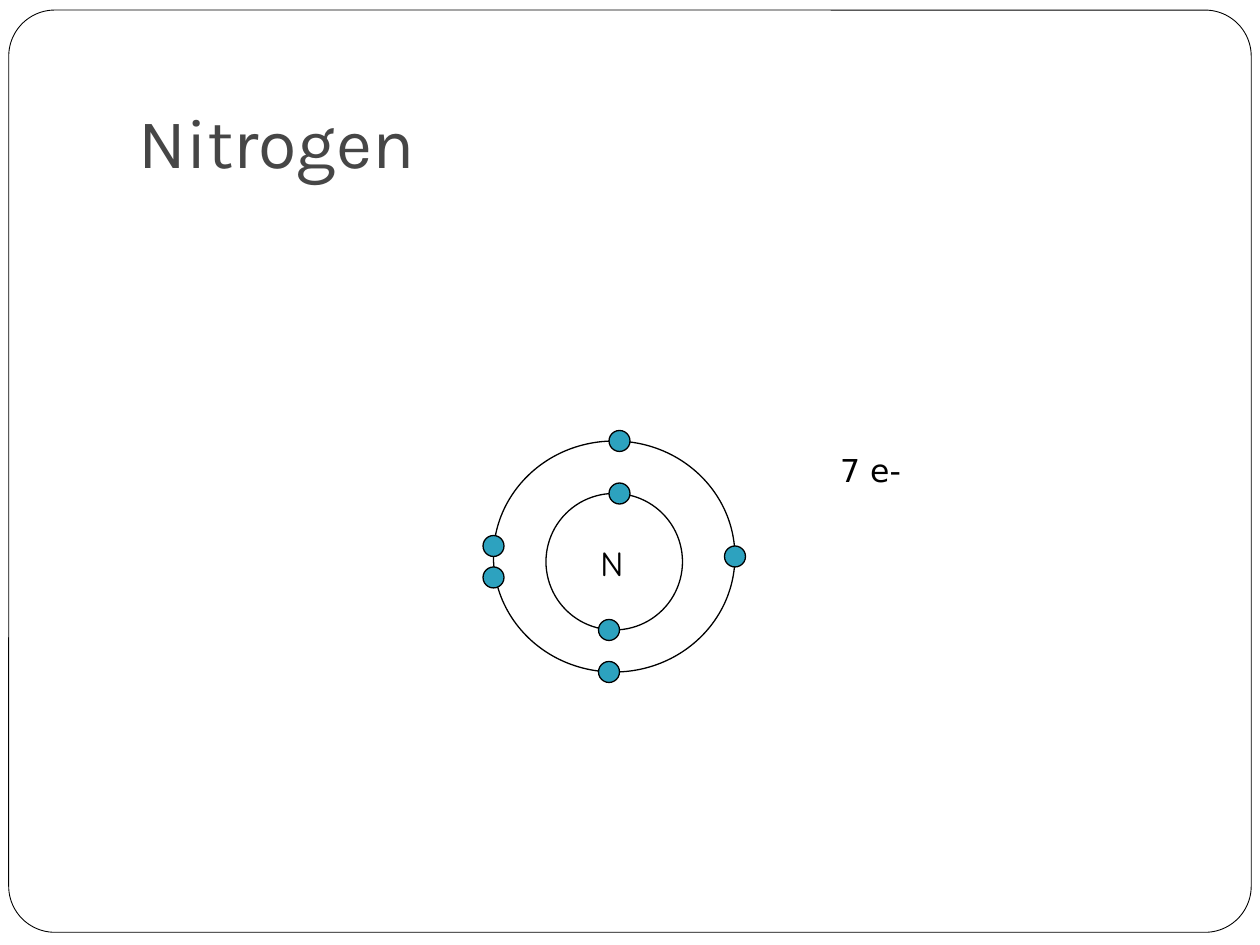
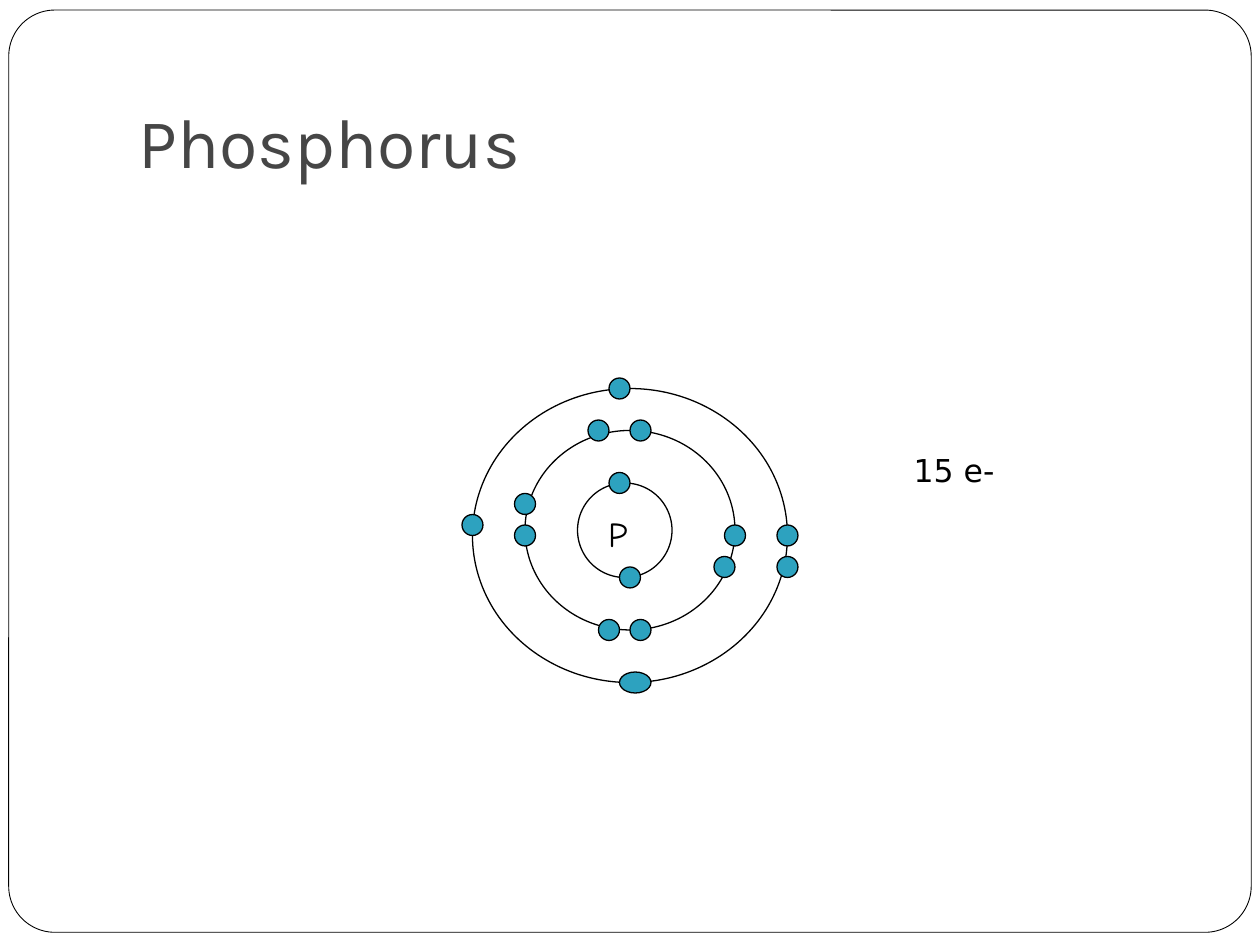
from dataclasses import dataclass
from pptx import Presentation
from pptx import util as u
from pptx.dml import color
from pptx.enum import shapes, text

ATOMS = [
    dict(
        name="Nitrogen",
        symbol=("N", (336, 306, 30, 31)),
        count=("7 e-", (473, 254, 51, 29)),
        shells=[(282, 252, 138, 132), (312, 282, 78, 78)],
        dots=[(354, 282), (348, 360),
              (282, 330), (348, 384), (420, 318), (282, 312), (354, 252)],
    ),
    dict(
        name="Phosphorus",
        symbol=("P", (340.5, 289.5, 25, 31)),
        count=("15 e-", (515, 254, 63, 29)),
        shells=[(330, 276, 54, 54), (300, 246, 120, 114), (270, 222, 180, 168)],
        dots=[(354, 276), (360, 330),
              (300, 306), (366, 360), (300, 288), (366, 246),
              (420, 306), (348, 360), (414, 324), (342, 246),
              (450, 306), (270, 300), (363, 390, 18), (450, 324), (354, 222)],
    ),
]


@dataclass(frozen=True)
class Theme:
    ink: str = "000000"
    paper: str = "FFFFFF"
    dot: str = "2DA2BF"
    title: str = "464646"
    head: tuple = ("Karla", 40)
    mark: tuple = ("Comic Neue", 20)
    note: tuple = ("DejaVu Sans", 18)
    edge: float = 0.5
    ring: float = 0.75
    size: float = 12


T = Theme()
FRAME = (5, 5.75, 710, 527)
TITLE = (72, 21.6, 612, 90)


def rgb(code):
    return color.RGBColor.from_string(code)


def pts(box):
    return [u.Pt(n) for n in box]


def draw(slide, kind, box, fill=None, width=T.ring):
    shape = slide.shapes.add_shape(kind, *pts(box))
    shape.shadow.inherit = False
    if fill:
        shape.fill.solid()
        shape.fill.fore_color.rgb = rgb(fill)
    else:
        shape.fill.background()
    shape.line.color.rgb = rgb(T.ink)
    shape.line.width = u.Pt(width)
    return shape


def write(slide, words, box, font, tint=T.ink, wrap=False,
          anchor=text.MSO_ANCHOR.TOP, foot=3.6):
    frame = slide.shapes.add_textbox(*pts(box)).text_frame
    frame.word_wrap = wrap
    frame.auto_size = (text.MSO_AUTO_SIZE.NONE if wrap
                       else text.MSO_AUTO_SIZE.SHAPE_TO_FIT_TEXT)
    frame.vertical_anchor = anchor
    frame.margin_bottom = u.Pt(foot)
    run = frame.paragraphs[0].add_run()
    run.text = words
    run.font.name, size = font
    run.font.size = u.Pt(size)
    run.font.color.rgb = rgb(tint)


def base(deck, name):
    slide = deck.slides.add_slide(deck.slide_layouts[6])
    slide.background.fill.solid()
    slide.background.fill.fore_color.rgb = rgb(T.paper)
    card = draw(slide, shapes.MSO_SHAPE.ROUNDED_RECTANGLE, FRAME, T.paper, T.edge)
    card.adjustments[0] = 0.05
    write(slide, name, TITLE, T.head, tint=T.title, wrap=True,
          anchor=text.MSO_ANCHOR.BOTTOM, foot=7.2)
    return slide


def build(deck, atom):
    slide = base(deck, atom["name"])
    oval = shapes.MSO_SHAPE.OVAL
    for shell in atom["shells"]:
        draw(slide, oval, shell)
    for x, y, *wide in atom["dots"]:
        w = wide[0] if wide else T.size
        draw(slide, oval, (x - w / 2, y - T.size / 2, w, T.size), T.dot)
    write(slide, *atom["symbol"], T.mark)
    write(slide, *atom["count"], T.note)


def main():
    deck = Presentation()
    deck.slide_width, deck.slide_height = u.Pt(720), u.Pt(540)
    for atom in ATOMS:
        build(deck, atom)
    deck.save("out.pptx")


if __name__ == "__main__":
    main()
